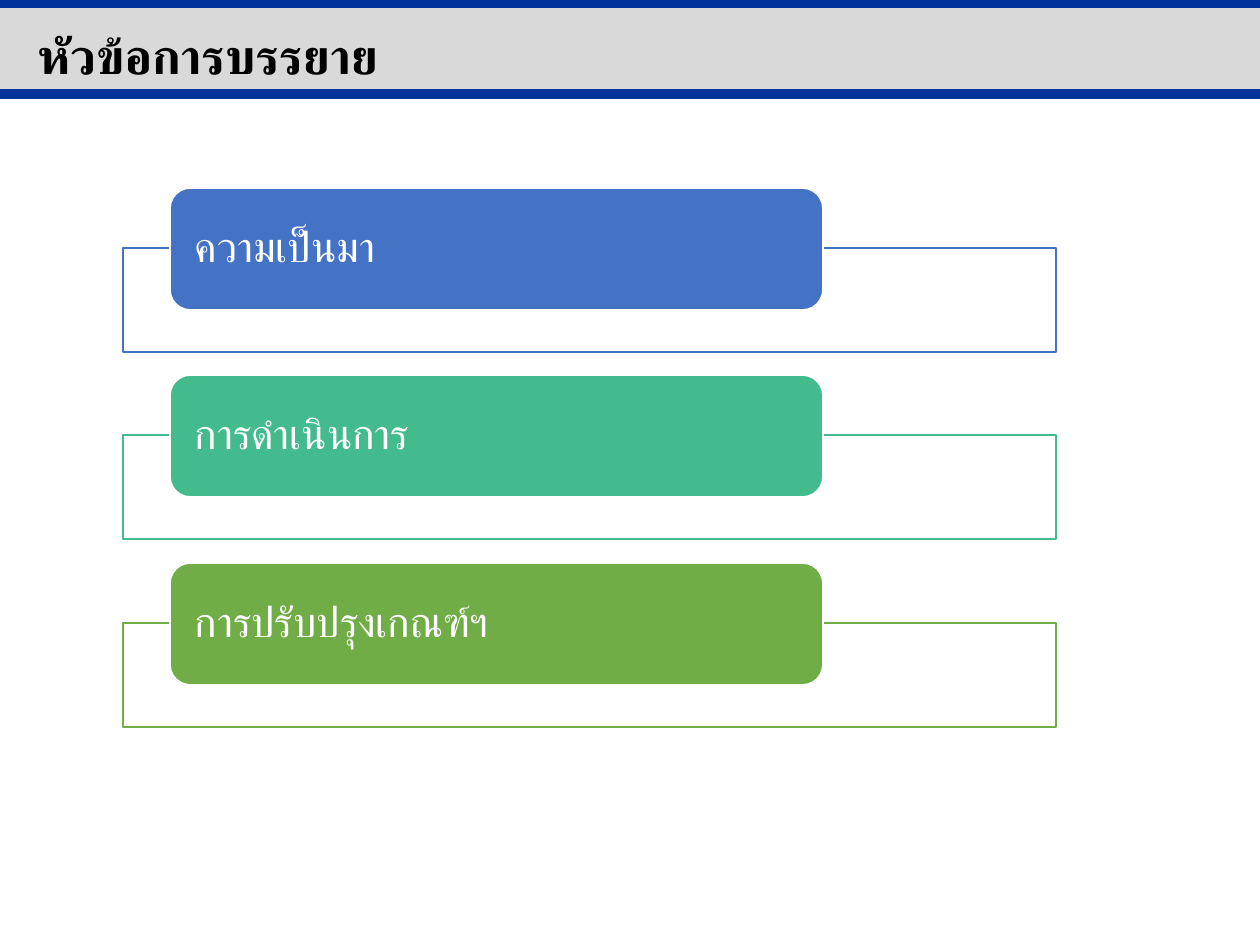
"""Build the lecture topics slide: a title band and three topic boxes."""
from lxml import etree
from pptx import Presentation
from pptx.dml.color import RGBColor
from pptx.enum.shapes import MSO_CONNECTOR, MSO_SHAPE
from pptx.enum.text import MSO_ANCHOR, PP_ALIGN
from pptx.oxml.ns import qn
from pptx.util import Pt

RECT, ROUND = MSO_SHAPE.RECTANGLE, MSO_SHAPE.ROUNDED_RECTANGLE
LINE, MIDDLE, LEFT = MSO_CONNECTOR.STRAIGHT, MSO_ANCHOR.MIDDLE, PP_ALIGN.LEFT
PX = 914400 / 126
FONT = "Cabin"
TOPICS = [
    ("ความเป็นมา", "4472C4"),
    ("การดำเนินการ", "43BB8D"),
    ("การปรับปรุงเกณฑ์ฯ", "70AD47"),
]


def paint(form, color):
    form.solid()
    form.fore_color.rgb = RGBColor.from_string(color)


def write(shape, text, size, color, bold=False):
    frame = shape.text_frame
    frame.text = text
    frame.word_wrap = True
    frame.vertical_anchor = MIDDLE
    par = frame.paragraphs[0]
    par.alignment = LEFT
    par.line_spacing = 0.9
    font = par.runs[0].font
    font.name, font.size, font.bold = FONT, Pt(size), bold
    paint(font.fill, color)
    props = par.runs[0]._r.get_or_add_rPr()
    etree.SubElement(props, qn("a:cs")).set("typeface", FONT)


prs = Presentation()
prs.slide_width, prs.slide_height = int(1260 * PX), int(945 * PX)
slide = prs.slides.add_slide(prs.slide_layouts[5])
shapes = slide.shapes

band = shapes.add_shape(RECT, 0, int(6 * PX), prs.slide_width, int(86 * PX))
band.shadow.inherit = False
paint(band.fill, "D9D9D9")
band.line.fill.background()

for y in (94, 3):
    rule = shapes.add_connector(LINE, 0, int(y * PX), prs.slide_width, int(y * PX))
    paint(rule.line.fill, "003399")
    rule.line.width = Pt(6)
    etree.SubElement(rule._element.spPr, qn("a:effectLst"))

title = shapes.title
title.left, title.top, title.width, title.height = [
    int(n * PX) for n in (25, -5, 903, 127)
]
write(title, "หัวข้อการบรรยาย", 28, "000000", True)
shapes._spTree.append(title._element)

for i, (text, color) in enumerate(TOPICS):
    top = 188 + i * 375 // 2
    parts = [
        (RECT, (123, top + 60, 933, 104), "FFFFFF", color),
        (ROUND, (170, top, 653, 122), color, "FFFFFF"),
    ]
    for kind, place, fill, edge in parts:
        box = shapes.add_shape(kind, *[int(n * PX) for n in place])
        box.shadow.inherit = False
        paint(box.fill, fill)
        paint(box.line.fill, edge)
        box.line.width = Pt(1)
    frame = box.text_frame
    frame.margin_left = frame.margin_right = int(19 * PX)
    frame.margin_top = frame.margin_bottom = 0
    write(box, text, 24, "FFFFFF")

prs.save("out.pptx")
